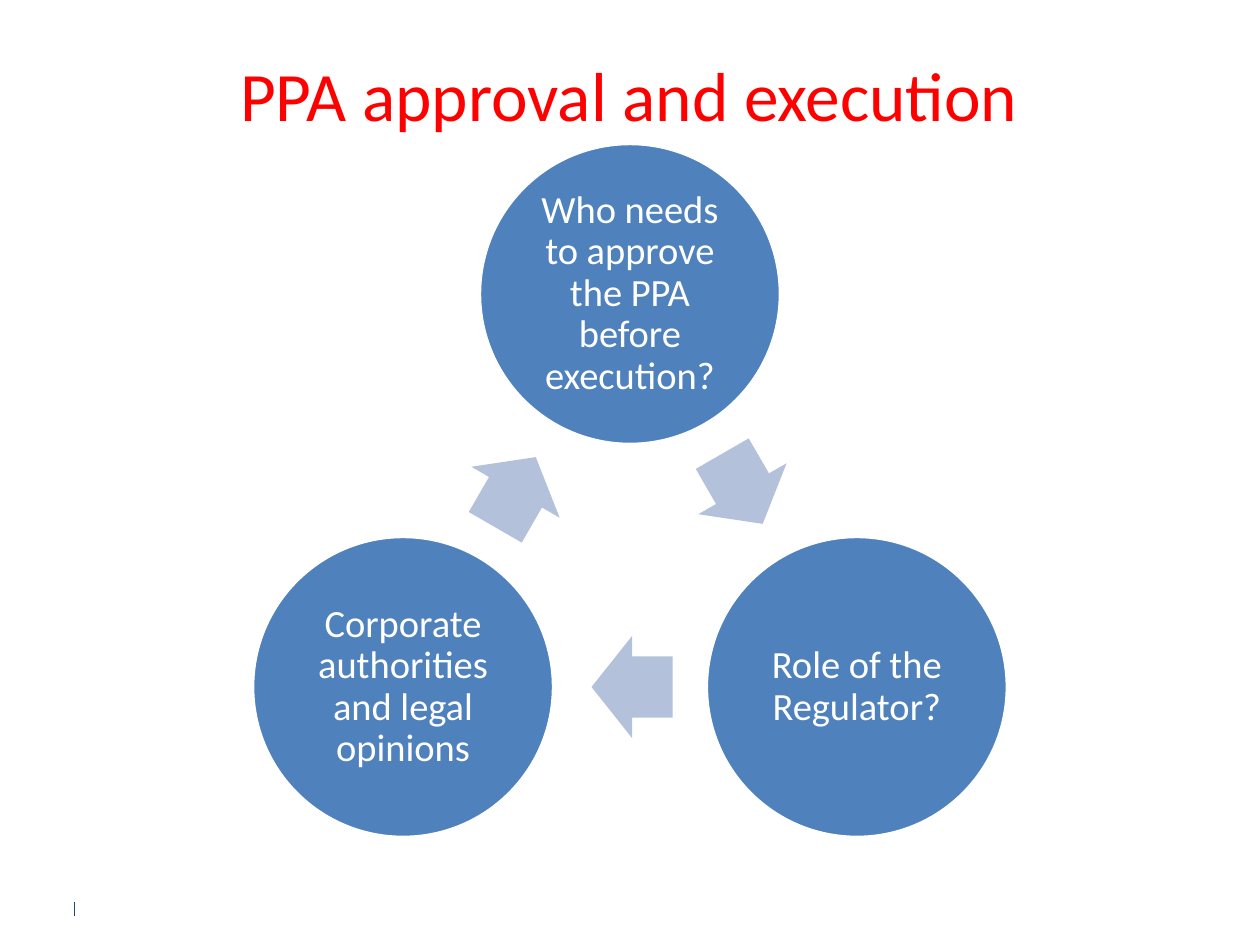
from dataclasses import dataclass
from math import atan2, cos, degrees, radians, sin

from lxml.etree import SubElement
from pptx import Presentation
from pptx.dml.color import RGBColor
from pptx.enum.shapes import MSO_CONNECTOR as Connector
from pptx.enum.shapes import MSO_SHAPE as Shape
from pptx.enum.text import MSO_ANCHOR as Anchor
from pptx.enum.text import PP_ALIGN as Align
from pptx.oxml.ns import qn
from pptx.util import Emu, Pt

EMU_PER_PX = 914400 / 126


@dataclass(frozen=True)
class Theme:
    font: str = "Calibri"
    title: str = "FF0000"
    circle: str = "4F81BD"
    arrow: str = "B3C1DB"
    white: str = "FFFFFF"
    mark: str = "1F497D"
    title_size: float = 39.6
    body_size: float = 22


THEME = Theme()

# Cycle geometry in px
CENTER = (630, 556)
RING_RADIUS = 262
DIAMETER = 301
ARROW_SIZE = (81, 102)
ARROW_LAG = 2  # arrows sit slightly behind the midpoint between circles
STEPS = [
    "Who needs to approve the PPA before execution?",
    "Role of the Regulator?",
    "Corporate authorities and legal opinions",
]


def px(value):
    return Emu(round(value * EMU_PER_PX))


def color(value):
    return RGBColor.from_string(value)


def centered_box(center, width, height):
    return [px(v) for v in (center[0] - width / 2, center[1] - height / 2, width, height)]


def write_text(shape, text, size, text_color, inset, line_spacing=1.0):
    frame = shape.text_frame
    frame_format = {
        "word_wrap": True, "vertical_anchor": Anchor.MIDDLE,
        "margin_left": inset, "margin_right": inset,
        "margin_top": inset, "margin_bottom": inset,
    }
    for name, value in frame_format.items():
        setattr(frame, name, value)
    paragraph = frame.paragraphs[0]
    paragraph.alignment = Align.CENTER
    paragraph.line_spacing = line_spacing
    run = paragraph.add_run()
    run.text = text
    for name, value in {"name": THEME.font, "size": Pt(size)}.items():
        setattr(run.font, name, value)
    run.font.color.rgb = color(text_color)


def add_filled(slide, kind, box, fill):
    shape = slide.shapes.add_shape(kind, *box)
    shape.shadow.inherit = False
    shape.fill.solid()
    shape.fill.fore_color.rgb = color(fill)
    return shape


def add_title(slide, text):
    box = slide.shapes.add_textbox(px(49), px(59), px(1160), px(69))
    write_text(box, text, THEME.title_size, THEME.title, px(6))


def add_circle(slide, center, text):
    circle = add_filled(slide, Shape.OVAL, centered_box(center, DIAMETER, DIAMETER), THEME.circle)
    circle.line.color.rgb = color(THEME.white)
    circle.line.width = Pt(2)
    write_text(circle, text, THEME.body_size, THEME.white, px(4), 0.9)


def add_arrow(slide, start, end):
    angle = atan2(end[1] - start[1], end[0] - start[0])
    center = ((start[0] + end[0]) / 2 - ARROW_LAG * cos(angle),
              (start[1] + end[1]) / 2 - ARROW_LAG * sin(angle))
    arrow = add_filled(slide, Shape.RIGHT_ARROW, centered_box(center, *ARROW_SIZE), THEME.arrow)
    arrow.line.fill.background()
    arrow.adjustments[0] = 0.6
    arrow.adjustments[1] = 0.5
    arrow.rotation = round(degrees(angle)) % 360


def add_footer_mark(slide):
    mark = slide.shapes.add_connector(Connector.STRAIGHT, px(74), px(902), px(74), px(916))
    mark.line.color.rgb = color(THEME.mark)
    mark.line.width = Pt(0.5)
    SubElement(mark._element.spPr, qn("a:effectLst"))


def add_cycle(slide, steps):
    # Circles share a ring, clockwise from the top
    angles = [radians(360 * i / len(steps) - 90) for i in range(len(steps))]
    centers = [(CENTER[0] + RING_RADIUS * cos(a), CENTER[1] + RING_RADIUS * sin(a))
               for a in angles]
    for i, text in enumerate(steps):
        add_circle(slide, centers[i], text)
        add_arrow(slide, centers[i], centers[(i + 1) % len(steps)])


def main():
    presentation = Presentation()
    presentation.slide_width = px(1260)
    presentation.slide_height = px(945)
    slide = presentation.slides.add_slide(presentation.slide_layouts[6])
    add_footer_mark(slide)
    add_title(slide, "PPA approval and execution")
    add_cycle(slide, STEPS)
    presentation.save("out.pptx")


if __name__ == "__main__":
    main()
